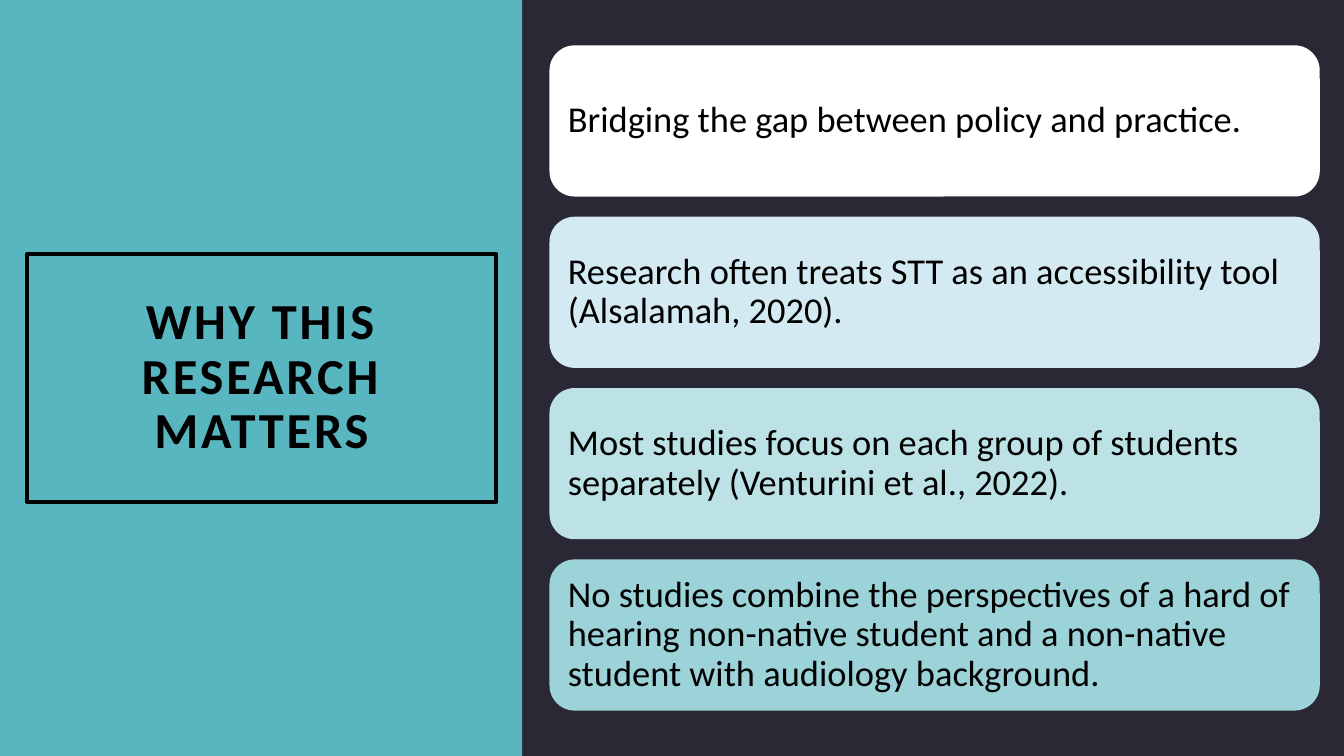
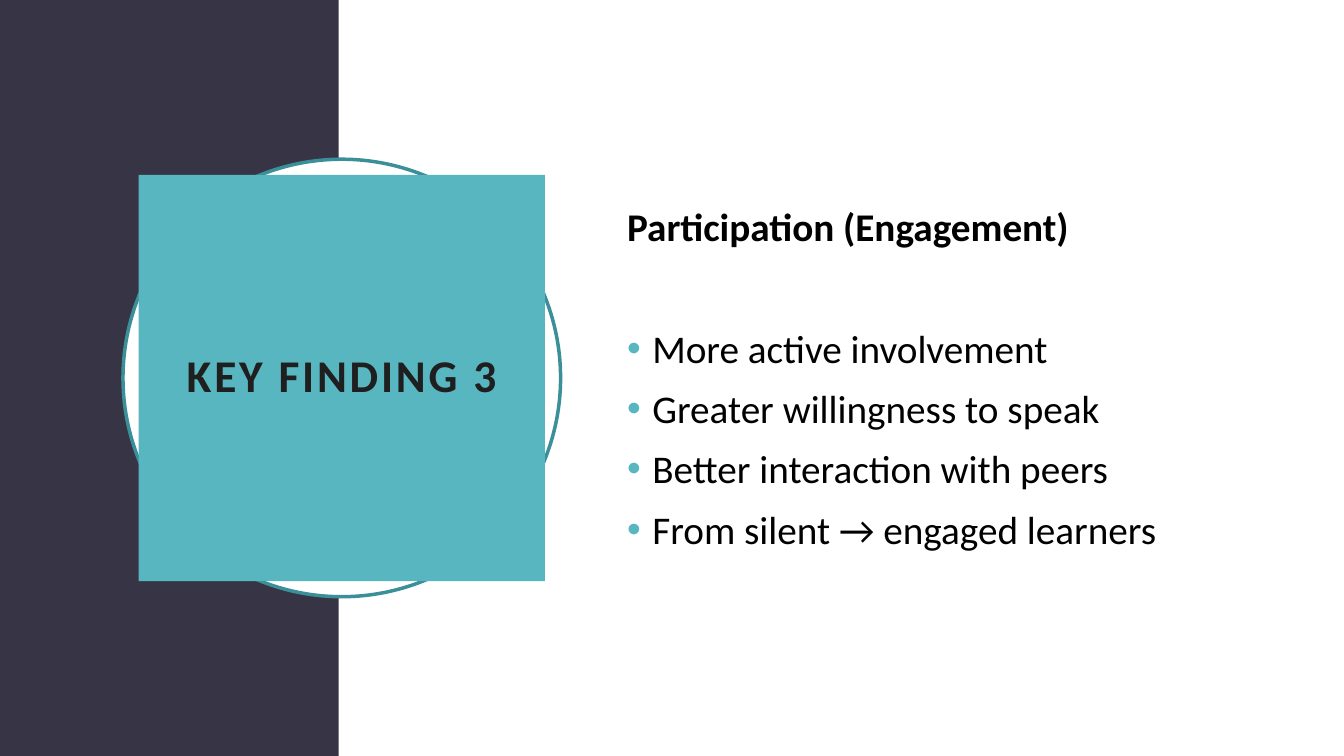
from pptx import Presentation
from pptx.dml.color import RGBColor
from pptx.enum.shapes import MSO_SHAPE as Shape
from pptx.enum.text import MSO_ANCHOR as Anchor, MSO_AUTO_SIZE as AutoSize, PP_ALIGN as Align
from pptx.oxml import parse_xml
from pptx.oxml.ns import nsdecls
from pptx.util import Inches, Pt

FONT = "Calibri"
BLACK, WHITE, TEAL = "000000", "FFFFFF", "58B6C0"
DARK, SLATE, RING, CHARCOAL = "292834", "373545", "3A8F98", "1F1F1F"
WIDTH, HEIGHT = 13.33, 7.5

REASONS = [
    ("Bridging the gap between policy and practice.", "FFFFFF"),
    ("Research often treats STT as an accessibility tool (Alsalamah, 2020).", "D4EAF3"),
    ("Most studies focus on each group of students separately (Venturini et al., 2022).", "BCE2E6"),
    ("No studies combine the perspectives of a hard of hearing non-native student "
     "and a non-native student with audiology background.", "9BD3D9"),
]
FINDING = "Participation (Engagement)"
EFFECTS = [
    "More active involvement",
    "Greater willingness to speak",
    "Better interaction with peers",
    "From silent → engaged learners",
]


def rgb(value):
    return RGBColor.from_string(value)


def paint(shape, fill=None, line=None, weight=0):
    if fill:
        shape.fill.solid()
        shape.fill.fore_color.rgb = rgb(fill)
    if line:
        shape.line.color.rgb = rgb(line)
        shape.line.width = Pt(weight)
    else:
        shape.line.fill.background()


def add_shape(slide, kind, box, fill, line=None, weight=0):
    shape = slide.shapes.add_shape(kind, *map(Inches, box))
    shape.shadow.inherit = False
    paint(shape, fill, line, weight)
    return shape


def place(shape, box):
    shape.left, shape.top, shape.width, shape.height = map(Inches, box)


def prepare_frame(shape, margin):
    frame = shape.text_frame
    frame.word_wrap = True
    frame.auto_size = AutoSize.NONE
    frame.vertical_anchor = Anchor.MIDDLE
    frame.margin_left = frame.margin_right = Inches(margin)
    frame.margin_top = frame.margin_bottom = Inches(margin)
    return frame


def style(paragraph, size, color=BLACK, bold=False, align=Align.LEFT, spacing=1.0, before=0):
    paragraph.alignment = align
    paragraph.line_spacing = spacing
    paragraph.space_before = Pt(before)
    font = paragraph.font
    font.name, font.size, font.bold = FONT, Pt(size), bold
    font.color.rgb = rgb(color)


def set_title(slide, text, box, size, color):
    """Fill the title placeholder, letter-spaced, and bring it to the front."""
    title = slide.shapes.title
    place(title, box)
    paragraph = prepare_frame(title, 0.2).paragraphs[0]
    run = paragraph.add_run()
    run.text = text
    run._r.get_or_add_rPr().set("spc", "200")
    style(paragraph, size, color, True, Align.CENTER, 0.9)
    slide.shapes._spTree.append(title._element)
    return title


def set_bullet(paragraph, color=None, indent=0.25):
    """Give the paragraph a coloured bullet, or none when no colour is given."""
    properties = paragraph._p.get_or_add_pPr()
    hanging = Inches(indent) if color else 0
    properties.set("marL", str(hanging))
    properties.set("indent", str(-hanging))
    namespace = nsdecls("a")
    if color:
        properties.append(parse_xml(f'<a:buClr {namespace}><a:srgbClr val="{color}"/></a:buClr>'))
        properties.append(parse_xml(f'<a:buFont {namespace} typeface="Arial"/>'))
        properties.append(parse_xml(f'<a:buChar {namespace} char="•"/>'))
    else:
        properties.append(parse_xml(f"<a:buNone {namespace}/>"))


def add_slide(presentation, layout, background):
    slide = presentation.slides.add_slide(presentation.slide_layouts[layout])
    slide.background.fill.solid()
    slide.background.fill.fore_color.rgb = rgb(background)
    return slide


def build_reasons(presentation):
    slide = add_slide(presentation, 5, DARK)
    add_shape(slide, Shape.RECTANGLE, (0, 0, 5.18, HEIGHT), TEAL)
    title = set_title(slide, "WHY THIS RESEARCH MATTERS", (0.27, 2.52, 4.65, 2.46), 36, BLACK)
    paint(title, line=BLACK, weight=3)

    card_height, gap = 1.5, 0.2
    count = len(REASONS)
    top = (HEIGHT - count * card_height - (count - 1) * gap) / 2
    for index, (text, fill) in enumerate(REASONS):
        box = (5.45, top + index * (card_height + gap), 7.64, card_height)
        card = add_shape(slide, Shape.ROUNDED_RECTANGLE, box, fill)
        paragraph = prepare_frame(card, 0.11).paragraphs[0]
        paragraph.text = text
        style(paragraph, 26, spacing=0.9)


def build_finding(presentation):
    slide = add_slide(presentation, 1, WHITE)
    add_shape(slide, Shape.RECTANGLE, (0, 0, 3.36, HEIGHT), SLATE)

    def centred(size):
        return 3.39 - size / 2, (HEIGHT - size) / 2, size, size

    add_shape(slide, Shape.OVAL, centred(4.34), WHITE, RING, 2.5)
    title = set_title(slide, "KEY FINDING 3", centred(4.03), 32.4, CHARCOAL)
    paint(title, TEAL)

    body = slide.placeholders[1]
    place(body, (6.12, 1.53, 5.82, 4.43))
    frame = prepare_frame(body, 0.1)
    heading = frame.paragraphs[0]
    heading.text = FINDING
    set_bullet(heading)
    style(heading, 28, bold=True)
    for index, text in enumerate(EFFECTS):
        paragraph = frame.add_paragraph()
        paragraph.text = text
        set_bullet(paragraph, TEAL)
        style(paragraph, 28, before=9.5 if index else 53)


def main():
    presentation = Presentation()
    presentation.slide_width, presentation.slide_height = Inches(WIDTH), Inches(HEIGHT)
    build_reasons(presentation)
    build_finding(presentation)
    presentation.save("out.pptx")


if __name__ == "__main__":
    main()
